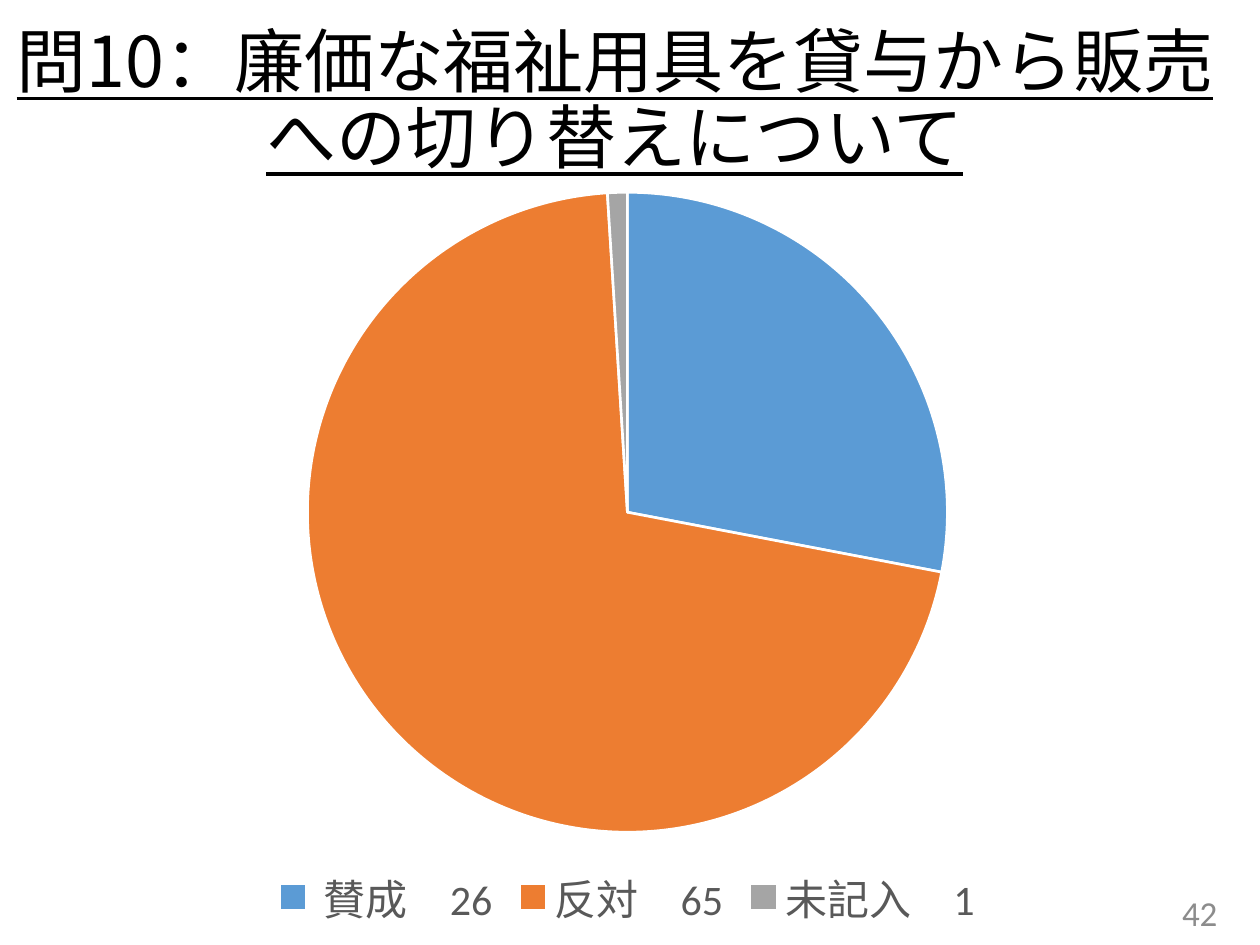
from dataclasses import dataclass

from lxml.etree import SubElement
from pptx import Presentation
from pptx.chart.data import CategoryChartData
from pptx.dml.color import RGBColor
from pptx.enum.chart import XL_CHART_TYPE, XL_LEGEND_POSITION
from pptx.enum.text import MSO_ANCHOR, MSO_AUTO_SIZE, PP_ALIGN
from pptx.oxml.ns import qn
from pptx.util import Pt

EMU_PER_PX = 914400 / 126
COLORS = {
    "title": "000000",
    "number": "8C8C8C",
    "legend": "595959",
    "border": "FFFFFF",
    "agree": "5B9BD5",
    "oppose": "ED7D31",
    "blank": "A5A5A5",
}
LATIN_FONT = "Calibri"
JAPANESE_FONT = "Noto Sans CJK JP"


@dataclass(frozen=True)
class Box:
    left: int
    top: int
    width: int
    height: int

    def emu(self) -> tuple[int, ...]:
        return tuple(px(n) for n in (self.left, self.top, self.width, self.height))


@dataclass(frozen=True)
class Answer:
    label: str
    percent: int
    color: str


ANSWERS = (
    Answer(" 賛成　26", 28, "agree"),
    Answer("反対　65", 71, "oppose"),
    Answer("未記入　1", 1, "blank"),
)
TITLE_BOX = Box(0, 18, 1230, 170)
NUMBER_BOX = Box(946, 887, 284, 50)
CHART_BOX = Box(0, 174, 1255, 762)
PIE_BOX = Box(308, 18, 640, 640)


def px(length: int) -> int:
    return round(length * EMU_PER_PX)


def color(name: str) -> RGBColor:
    return RGBColor.from_string(COLORS[name])


def style_font(font, size: int, color_name: str, face: str) -> None:
    font.size = Pt(size)
    font.name = face
    font.color.rgb = color(color_name)


def write_text(shape, text: str, size: int, color_name: str, face: str, alignment):
    frame = shape.text_frame
    frame.text = text
    frame.word_wrap = True
    frame.auto_size = MSO_AUTO_SIZE.NONE
    frame.vertical_anchor = MSO_ANCHOR.MIDDLE
    para = frame.paragraphs[0]
    para.alignment = alignment
    span = para.runs[0]
    style_font(span.font, size, color_name, face)
    return para


def add_title(page) -> None:
    title = page.shapes.title
    title.left, title.top, title.width, title.height = TITLE_BOX.emu()
    para = write_text(
        title, "問10：廉価な福祉用具を貸与から販売への切り替えについて",
        40, "title", JAPANESE_FONT, PP_ALIGN.CENTER,
    )
    para.line_spacing = 0.9
    span = para.runs[0]
    span.font.underline = True
    SubElement(span.font._element, qn("a:ea")).set("typeface", JAPANESE_FONT)


def place_pie(chart) -> None:
    plot_area = chart._chartSpace.chart.plotArea
    for old_layout in plot_area.findall(qn("c:layout")):
        plot_area.remove(old_layout)
    layout = plot_area.makeelement(qn("c:layout"))
    plot_area.insert(0, layout)
    manual = SubElement(layout, qn("c:manualLayout"))
    settings = {
        "layoutTarget": "inner",
        "xMode": "edge",
        "yMode": "edge",
        "x": PIE_BOX.left / CHART_BOX.width,
        "y": PIE_BOX.top / CHART_BOX.height,
        "w": PIE_BOX.width / CHART_BOX.width,
        "h": PIE_BOX.height / CHART_BOX.height,
    }
    for name, value in settings.items():
        text = value if isinstance(value, str) else f"{value:.3f}"
        SubElement(manual, qn(f"c:{name}")).set("val", text)


def add_pie(page) -> None:
    data = CategoryChartData()
    data.categories = [answer.label for answer in ANSWERS]
    data.add_series("Series 1", [answer.percent for answer in ANSWERS])
    chart = page.shapes.add_chart(XL_CHART_TYPE.PIE, *CHART_BOX.emu(), data).chart
    chart.has_title = False
    style_font(chart.font, 10, "title", LATIN_FONT)
    chart.has_legend = True
    chart.legend.position = XL_LEGEND_POSITION.BOTTOM
    chart.legend.include_in_layout = False
    style_font(chart.legend.font, 24, "legend", LATIN_FONT)
    plot = chart.plots[0]
    plot.vary_by_categories = True
    for index, answer in enumerate(ANSWERS):
        piece = plot.series[0].points[index].format
        piece.fill.solid()
        piece.fill.fore_color.rgb = color(answer.color)
        piece.line.color.rgb = color("border")
        piece.line.width = Pt(1.5)
    place_pie(chart)


def main() -> None:
    deck = Presentation()
    deck.slide_width, deck.slide_height = px(1260), px(945)
    page = deck.slides.add_slide(deck.slide_layouts[5])
    add_title(page)
    number = page.shapes.add_textbox(*NUMBER_BOX.emu())
    write_text(number, "42", 20, "number", LATIN_FONT, PP_ALIGN.RIGHT)
    add_pie(page)
    deck.save("out.pptx")


if __name__ == "__main__":
    main()
